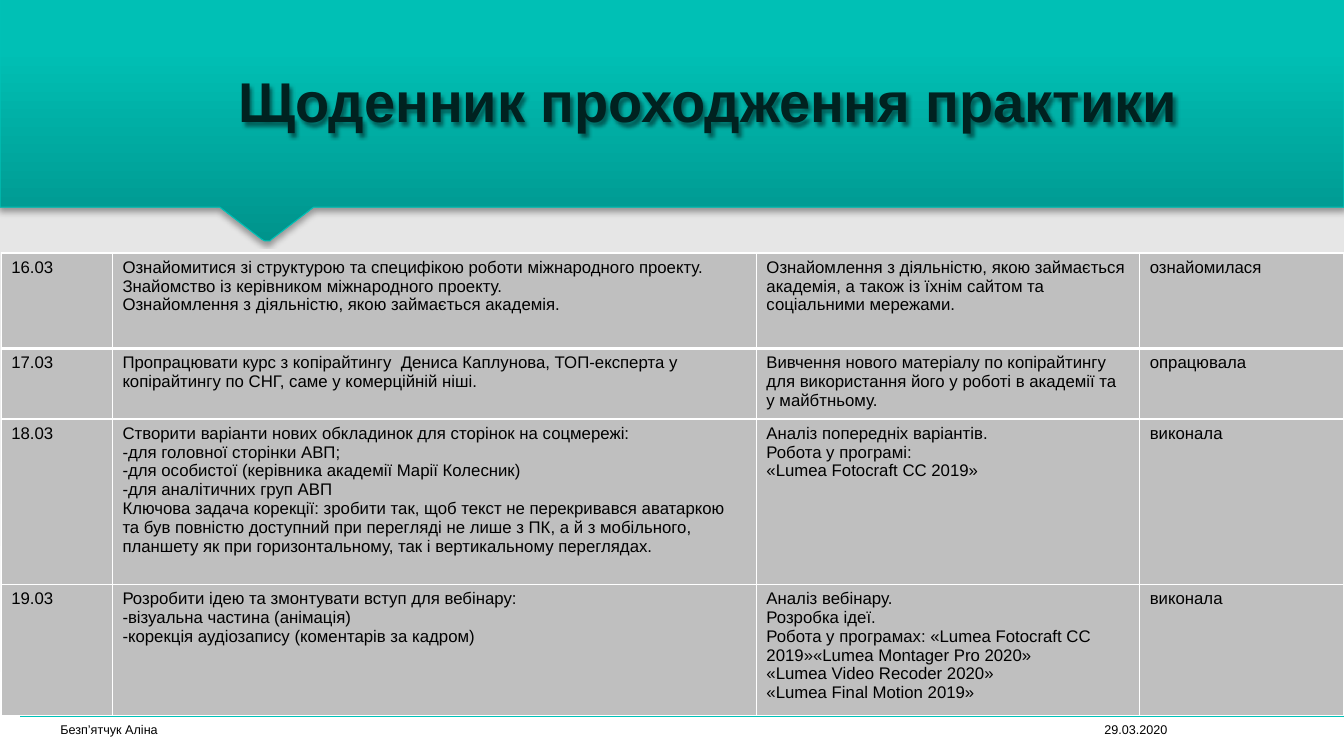
from dataclasses import dataclass

from lxml import etree
from pptx import Presentation
from pptx.dml.color import RGBColor
from pptx.enum.shapes import MSO_CONNECTOR
from pptx.enum.text import MSO_ANCHOR, MSO_AUTO_SIZE, PP_ALIGN
from pptx.oxml.ns import qn
from pptx.util import Pt

STRAIGHT = MSO_CONNECTOR.STRAIGHT
BOTTOM = MSO_ANCHOR.BOTTOM
NO_AUTOFIT = MSO_AUTO_SIZE.NONE
LEFT, CENTER, RIGHT = PP_ALIGN.LEFT, PP_ALIGN.CENTER, PP_ALIGN.RIGHT


@dataclass(frozen=True)
class Theme:
    font: str = "Arial"
    title_size: int = 40
    table_size: int = 12
    footer_size: int = 9
    title: str = "002220"
    text: str = "000000"
    accent: str = "00C2B7"
    cell: str = "BFBFBF"
    border: str = "FFFFFF"
    background: tuple = ((0, "DBDBDB"), (100, "FFFFFF"))
    banner: tuple = ((0, "00948C"), (80, "00C0B5"), (100, "00C1B6"))


theme = Theme()


def set_gradient(fill, element, stops, angle):
    """Fill with colour stops; angle runs counter-clockwise from the left."""
    fill.gradient()
    fill.gradient_angle = angle
    stop_list = element.find(".//" + qn("a:gsLst"))
    for old_stop in list(stop_list):
        stop_list.remove(old_stop)
    for position, color in stops:
        stop = etree.SubElement(stop_list, qn("a:gs"), pos=str(position * 1000))
        etree.SubElement(stop, qn("a:srgbClr"), val=color)


def add_shadow(shape, opacity, blur, distance, direction):
    shape.shadow.inherit = False
    effects = shape.element.spPr.find(qn("a:effectLst"))
    shadow = etree.SubElement(
        effects, qn("a:outerShdw"), blurRad=str(Pt(blur)), dist=str(Pt(distance)),
        dir=str(direction * 60000), rotWithShape="0")
    color = etree.SubElement(shadow, qn("a:srgbClr"), val=theme.text)
    etree.SubElement(color, qn("a:alpha"), val=str(opacity * 1000))


presentation = Presentation()
presentation.slide_width, presentation.slide_height = Pt(960), Pt(540)
slide = presentation.slides.add_slide(presentation.slide_layouts[5])
set_gradient(slide.background.fill, slide.element, theme.background, 270)

# Footer rule
rule = slide.shapes.add_connector(STRAIGHT, Pt(14.4), Pt(512), Pt(960), Pt(512))
rule.line.color.rgb = RGBColor.from_string(theme.accent)
rule.line.width = Pt(0.75)
etree.SubElement(rule.element.spPr, qn("a:effectLst"))

# Banner with its pointer
builder = slide.shapes.build_freeform(960, 0, scale=Pt(1))
builder.add_line_segments([
    (0, 0), (0, 148.3), (157, 148.3), (187.2, 171.4), (189, 172), (190.8, 172.1),
    (192.6, 172), (194.4, 171.4), (224, 148.3), (960, 148.3)], close=True)
banner = builder.convert_to_shape()
set_gradient(banner.fill, banner.element, theme.banner, 90)
banner.line.color.rgb = RGBColor.from_string(theme.accent)
banner.line.width = Pt(0.75)
add_shadow(banner, 35, 3.1, 1.8, 90)

# Title
title = slide.shapes.title
banner.element.addnext(title.element)
title.left, title.top, title.width, title.height = Pt(103), Pt(23), Pt(805), Pt(76.3)
title.text_frame.text = "Щоденник проходження практики"
title.text_frame.word_wrap = True
title.text_frame.auto_size = NO_AUTOFIT
title.text_frame.vertical_anchor = BOTTOM
title_paragraph = title.text_frame.paragraphs[0]
title_paragraph.alignment = CENTER
title_font = title_paragraph.runs[0].font
title_font.name, title_font.size, title_font.bold = theme.font, Pt(theme.title_size), True
title_font.color.rgb = RGBColor.from_string(theme.title)
add_shadow(title, 45, 3, 2.5, 45)

# Footer
for left, width, text, alignment in (
        (735, 106, "29.03.2020", RIGHT),
        (36, 680, "Безп’ятчук Аліна", LEFT)):
    footer = slide.shapes.add_textbox(Pt(left), Pt(501), Pt(width), Pt(29))
    footer.text_frame.word_wrap = True
    footer.text_frame.vertical_anchor = BOTTOM
    footer.text_frame.text = text
    paragraph = footer.text_frame.paragraphs[0]
    paragraph.alignment = alignment
    font = paragraph.runs[0].font
    font.name, font.size = theme.font, Pt(theme.footer_size)
    font.color.rgb = RGBColor.from_string(theme.text)

# Diary table: date, task, content, result
diary = [
    ("16.03",
     "Ознайомитися зі структурою та специфікою роботи міжнародного проекту.\n"
     "Знайомство із керівником міжнародного проекту.\n"
     "Ознайомлення з діяльністю, якою займається академія.",
     "Ознайомлення з діяльністю, якою займається академія, а також із їхнім "
     "сайтом та соціальними мережами.",
     "ознайомилася"),
    ("17.03",
     "Пропрацювати курс з копірайтингу  Дениса Каплунова, ТОП-експерта у "
     "копірайтингу по СНГ, саме у комерційній ніші.",
     "Вивчення нового матеріалу по копірайтингу для використання його у роботі "
     "в академії та у майбтньому.",
     "опрацювала"),
    ("18.03",
     "Створити варіанти нових обкладинок для сторінок на соцмережі:\n"
     "-для головної сторінки АВП;\n"
     "-для особистої (керівника академії Марії Колесник)\n"
     "-для аналітичних груп АВП\n"
     "Ключова задача корекції: зробити так, щоб текст не перекривався аватаркою "
     "та був повністю доступний при перегляді не лише з ПК, а й з мобільного, "
     "планшету як при горизонтальному, так і вертикальному переглядах.",
     "Аналіз попередніх варіантів.\n"
     "Робота у програмі:\n"
     "«Lumea Fotocraft CC 2019»",
     "виконала"),
    ("19.03",
     "Розробити ідею та змонтувати вступ для вебінару:\n"
     "-візуальна частина (анімація)\n"
     "-корекція аудіозапису (коментарів за кадром)",
     "Аналіз вебінару.\n"
     "Розробка ідеї.\n"
     "Робота у програмах: «Lumea Fotocraft CC 2019»«Lumea Montager Pro 2020»\n"
     "«Lumea Video Recoder 2020»\n"
     "«Lumea Final Motion 2019»",
     "виконала"),
]
column_widths = (79.4, 460, 273.8, 145.6)
row_heights = (68.2, 48.2, 118.1, 89.3)
table = slide.shapes.add_table(
    len(diary), len(column_widths), Pt(0.9), Pt(180.7),
    Pt(sum(column_widths)), Pt(sum(row_heights))).table
table.first_row = table.horz_banding = False
for column, width in zip(table.columns, column_widths):
    column.width = Pt(width)
for row, height in zip(table.rows, row_heights):
    row.height = Pt(height)

for row_index, entry in enumerate(diary):
    border_widths = {
        "a:lnL": 1,
        "a:lnR": 1,
        "a:lnT": 3 if row_index == 1 else 1,
        "a:lnB": 3 if row_index == 0 else 1,
    }
    for column_index, text in enumerate(entry):
        cell = table.cell(row_index, column_index)
        cell.text_frame.text = text
        for paragraph in cell.text_frame.paragraphs:
            font = paragraph.runs[0].font
            font.name, font.size = theme.font, Pt(theme.table_size)
            font.color.rgb = RGBColor.from_string(theme.text)
        properties = cell._tc.get_or_add_tcPr()
        for tag, width in border_widths.items():
            border = etree.SubElement(properties, qn(tag), w=str(Pt(width)))
            border_fill = etree.SubElement(border, qn("a:solidFill"))
            etree.SubElement(border_fill, qn("a:srgbClr"), val=theme.border)
        cell.fill.solid()
        cell.fill.fore_color.rgb = RGBColor.from_string(theme.cell)

presentation.save("out.pptx")
